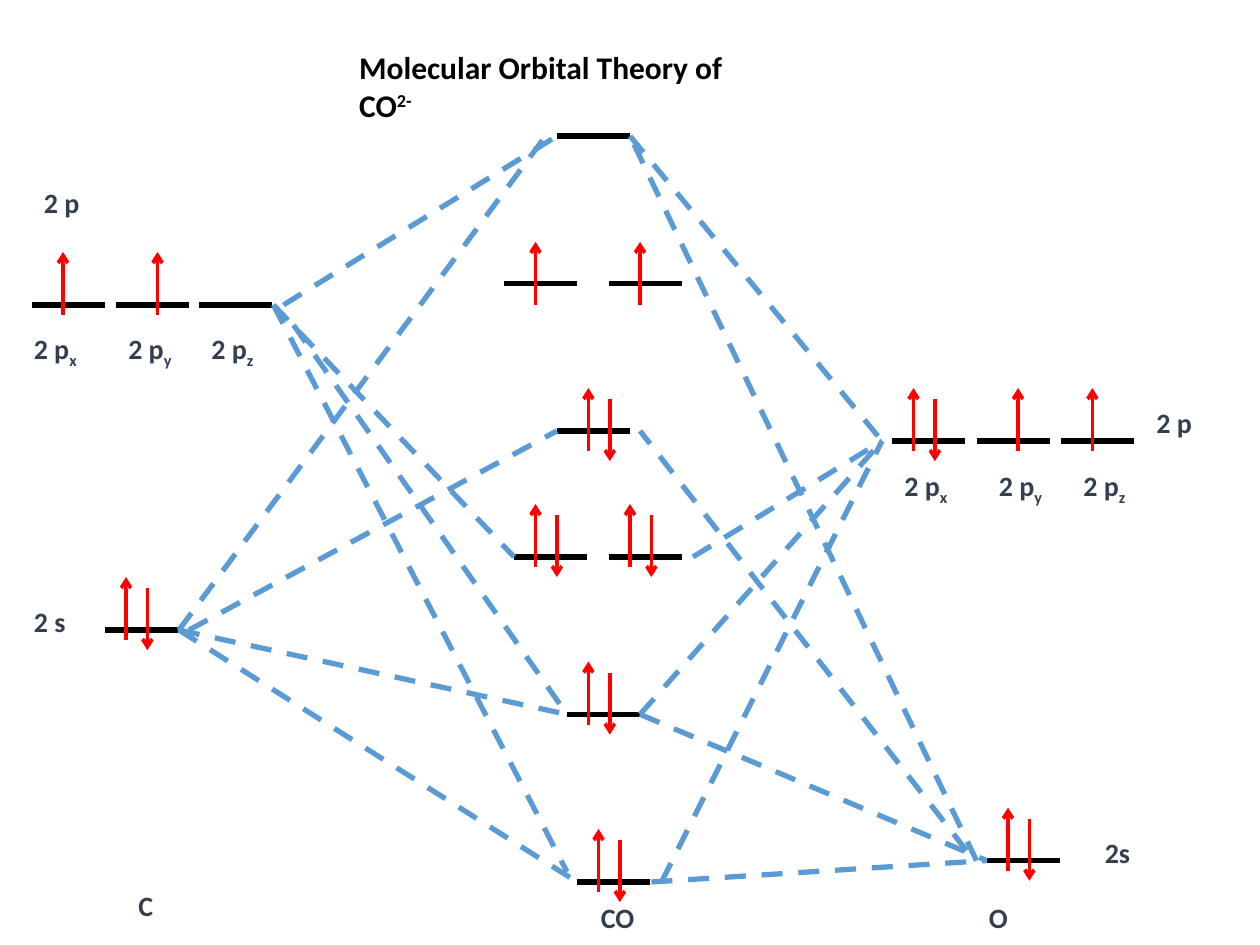
from dataclasses import dataclass

from lxml import etree
from pptx import Presentation
from pptx import util as u
from pptx.dml.color import RGBColor
from pptx.enum import dml, shapes, text
from pptx.oxml.ns import qn


@dataclass(frozen=True)
class Theme:
    font: str = "Calibri"
    title_size: int = 18
    label_size: int = 16
    title_color: str = "000000"
    label_color: str = "333F50"
    level_color: str = "000000"
    electron_color: str = "FF0000"
    link_color: str = "5B9BD5"
    thick: float = 3
    thin: float = 2


class OrbitalDiagram:
    """Draws the parts of an orbital diagram on one slide."""

    LEVEL_WIDTH = 0.58
    PAIR_GAP = 0.17

    def __init__(self, page, theme):
        self.page = page
        self.theme = theme

    def add_spans(self, frame, spans, size, color):
        """Put (wording, baseline percent) spans into one paragraph."""
        para = frame.paragraphs[0]
        para.alignment = text.PP_ALIGN.LEFT
        for wording, baseline in spans:
            span = para.add_run()
            span.text = wording
            span.font.name = self.theme.font
            span.font.size = u.Pt(size)
            span.font.bold = True
            span.font.color.rgb = RGBColor.from_string(color)
            if baseline:
                span._r.get_or_add_rPr().set("baseline", str(baseline * 1000))

    def title(self, spans, left, top, width, height):
        box = self.page.shapes.title
        box.left, box.top = u.Inches(left), u.Inches(top)
        box.width, box.height = u.Inches(width), u.Inches(height)
        frame = box.text_frame
        frame.word_wrap = True
        frame.auto_size = text.MSO_AUTO_SIZE.NONE
        frame.vertical_anchor = text.MSO_ANCHOR.TOP
        self.add_spans(frame, spans, self.theme.title_size,
                       self.theme.title_color)

    def label(self, wording, left, top, width, subscript=""):
        box = self.page.shapes.add_textbox(
            u.Inches(left), u.Inches(top), u.Inches(width), u.Inches(0.4))
        frame = box.text_frame
        frame.word_wrap = False
        frame.auto_size = text.MSO_AUTO_SIZE.SHAPE_TO_FIT_TEXT
        spans = [(wording, 0)]
        if subscript:
            spans.append((subscript, -25))
        self.add_spans(frame, spans, self.theme.label_size,
                       self.theme.label_color)

    def line(self, start, end, color, width, dashed=False, arrow=False):
        line = self.page.shapes.add_connector(
            shapes.MSO_CONNECTOR.STRAIGHT,
            *(u.Inches(value) for value in (*start, *end)))
        line.line.color.rgb = RGBColor.from_string(color)
        line.line.width = u.Pt(width)
        if dashed:
            line.line.dash_style = dml.MSO_LINE.DASH
        properties = line._element.spPr
        if arrow:
            outline = properties.find(qn("a:ln"))
            etree.SubElement(outline, qn("a:tailEnd"), type="arrow")
        etree.SubElement(properties, qn("a:effectLst"))

    def level(self, left, y):
        self.line((left, y), (left + self.LEVEL_WIDTH, y),
                  self.theme.level_color, self.theme.thick)

    def electron(self, x, start, end):
        self.line((x, start), (x, end), self.theme.electron_color,
                  self.theme.thin, arrow=True)

    def electrons(self, x, y, count):
        """One upward electron, and a lower downward one if paired."""
        self.electron(x, y + 0.08, y - 0.42)
        if count == 2:
            self.electron(x + self.PAIR_GAP, y - 0.33, y + 0.16)

    def link(self, start, end):
        self.line(start, end, self.theme.link_color, self.theme.thick,
                  dashed=True)


# Left end and height of each energy level
LEVELS = [
    (0.25, 2.42), (0.92, 2.42), (1.58, 2.42), (0.83, 5),         # C
    (7.08, 3.5), (7.75, 3.5), (8.42, 3.5), (7.83, 6.83),         # O
    (4.42, 1.08), (4, 2.25), (4.83, 2.25), (4.42, 3.42),         # CO
    (4.08, 4.42), (4.83, 4.42), (4.5, 5.67), (4.58, 7),
]

# Position of the first electron, its reference height, number of electrons
ELECTRONS = [
    (0.5, 2.42, 1), (1.25, 2.42, 1), (1, 5, 2),                  # C
    (7.25, 3.5, 2), (8.08, 3.5, 1), (8.67, 3.5, 1), (8, 6.83, 2),  # O
    (4.25, 2.34, 1), (5.08, 2.34, 1), (4.67, 3.5, 2),            # CO
    (4.25, 4.42, 2), (5, 4.42, 2), (4.67, 5.67, 2), (4.75, 7, 2),
]

# Wording, left, top, width
LABELS = [
    ("2 p", 0.25, 1.42, 0.52), ("2 s", 0.17, 4.75, 0.49),
    ("2 p", 9.08, 3.17, 0.52), ("2s", 8.67, 6.58, 0.43),
    ("C", 1, 7, 0.34), ("CO", 4.67, 7.1, 0.5), ("O", 7.75, 7.1, 0.37),
]

# Top of the p labels and the left end of each one
P_LABELS = [(2.58, (0.17, 0.92, 1.58)), (3.67, (7.08, 7.83, 8.5))]

C_2S, C_2P, O_2P = (1.42, 5), (2.17, 2.42), (7, 3.5)
SIGMA_TOP, SIGMA_LOW = (5, 1.08), (5.08, 5.67)
LINKS = [
    # From carbon
    (C_2S, (4.5, 5.67)), (C_2S, (4.58, 7)), (C_2S, (4.33, 1.08)),
    ((1.5, 5), (4.42, 3.42)), ((2.25, 2.42), (4.42, 1.08)),
    (C_2P, (4.08, 4.42)), (C_2P, (4.5, 6.92)), ((2.33, 2.58), (4.5, 5.67)),
    # To oxygen
    (SIGMA_LOW, (7.83, 6.83)), ((5.17, 7), (7.83, 6.83)),
    (SIGMA_TOP, O_2P), ((5.5, 4.42), O_2P), ((5.25, 7), O_2P),
    (SIGMA_LOW, O_2P), ((7.75, 6.83), SIGMA_TOP), ((7.67, 6.75), (5.08, 3.42)),
]


def main():
    deck = Presentation()
    deck.slide_width, deck.slide_height = u.Inches(10), u.Inches(7.5)
    page = deck.slides.add_slide(deck.slide_layouts.get_by_name("Title Only"))
    diagram = OrbitalDiagram(page, Theme())

    diagram.title([("Molecular Orbital Theory of CO", 0), ("2-", 30)],
                  2.75, 0.33, 3.54, 0.4)

    # Energy levels and their electrons
    for left, y in LEVELS:
        diagram.level(left, y)
    for x, y, count in ELECTRONS:
        diagram.electrons(x, y, count)

    # Names of the orbitals and atoms
    for wording, left, top, width in LABELS:
        diagram.label(wording, left, top, width)
    for top, lefts in P_LABELS:
        for left, axis in zip(lefts, "xyz"):
            diagram.label("2 p", left, top, 0.6, subscript=axis)

    # Links between atomic and molecular orbitals
    for start, end in LINKS:
        diagram.link(start, end)

    deck.save("out.pptx")


if __name__ == "__main__":
    main()
